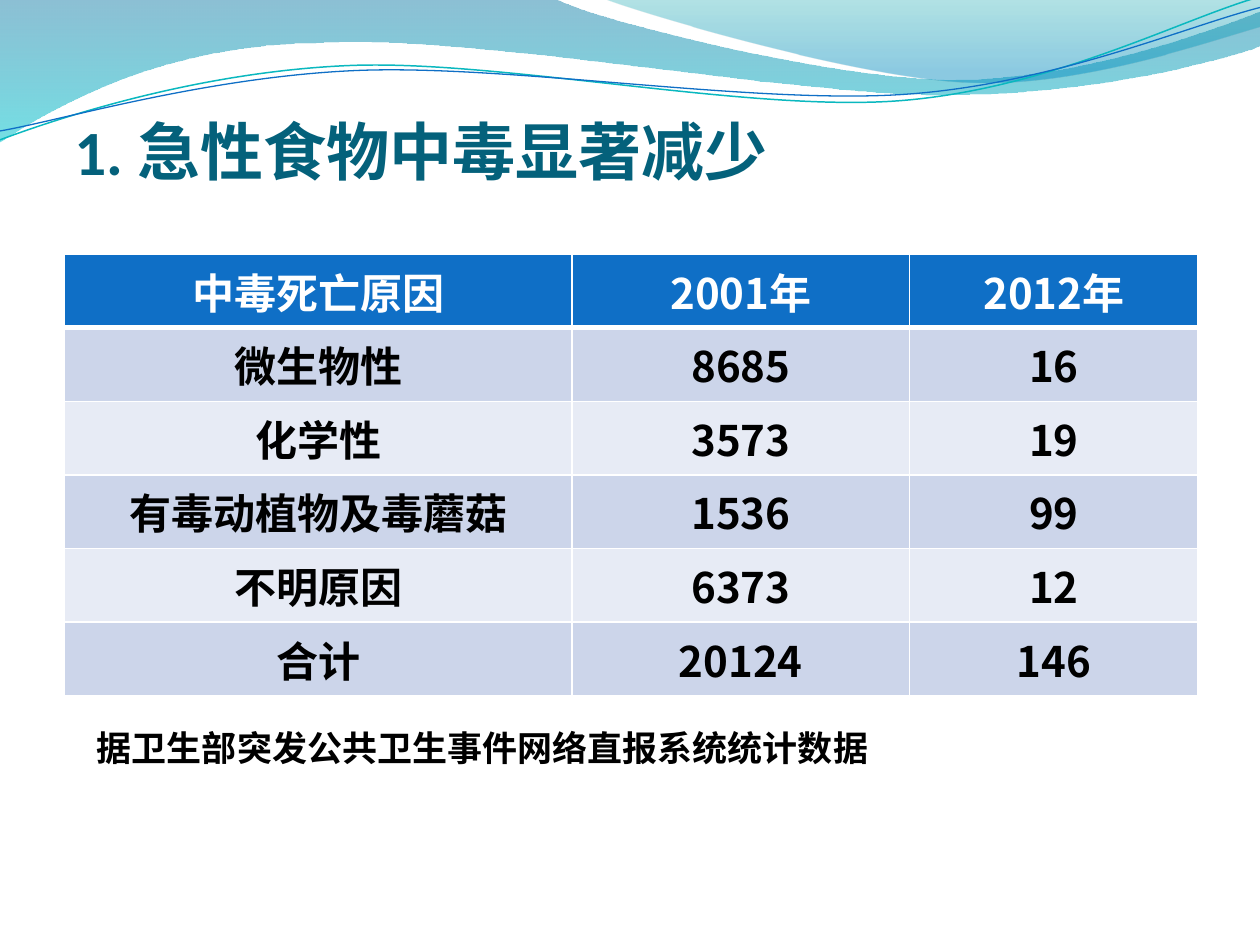
import math

from lxml import etree
from pptx import Presentation
from pptx import util as u
from pptx.dml.color import RGBColor
from pptx.enum import text
from pptx.oxml.ns import qn

WIDTH, HEIGHT = 10, 7.5
SANS, LATIN, SERIF = "Noto Sans CJK SC", "Calibri", "TeX Gyre Pagella"
WHITE, BLACK, TEAL, BLUE = "FFFFFF", "000000", "04617B", "0F6FC6"
BANDS = ("CCD5EA", "E7EBF5")
TILT = 357.3

BROAD_WAVE = [
    (0, -0.01), (4.4, -0.01),
    (4.76, 0.17, 6.64, 0.63, 7.58, 0.63), (8.53, 0.63, 9.58, 0.26, 10, 0.09),
    (10.01, 0.36),
    (9.83, 0.44, 8.7, 0.76, 7.46, 0.75), (6.22, 0.75, 3.82, 0.28, 2.57, 0.34),
    (1.29, 0.35, 0.46, 0.83, -0.01, 1.13),
]
RIGHT_WAVE = [
    (4.79, -0.01),
    (5.09, 0.11, 6.82, 0.62, 7.69, 0.65), (8.56, 0.69, 9.61, 0.32, 10, 0.21),
    (10, 0),
]
TEAL_STRAND = [
    (0, 1.11),
    (0.48, 0.93, 1.58, 0.57, 2.77, 0.52), (3.95, 0.47, 5.93, 0.89, 7.13, 0.8),
    (8.33, 0.71, 9.38, 0.15, 9.98, -0.02),
]
BLUE_STRAND = [
    (0, 1.04),
    (0.47, 0.96, 1.64, 0.61, 2.83, 0.56), (4.03, 0.51, 5.97, 0.83, 7.17, 0.75),
    (8.36, 0.67, 9.41, 0.21, 10, 0.06),
]
ROWS = [
    ("中毒死亡原因", "2001年", "2012年"),
    ("微生物性", "8685", "16"),
    ("化学性", "3573", "19"),
    ("有毒动植物及毒蘑菇", "1536", "99"),
    ("不明原因", "6373", "12"),
    ("合计", "20124", "146"),
]


def color(value):
    """Turn a hex string into a colour."""
    return RGBColor.from_string(value)


def box(left, top, width, height):
    """Turn percentages of the slide's size into lengths."""
    return [u.Inches(share * side / 100) for share, side in
            zip((left, top, width, height), (WIDTH, HEIGHT) * 2)]


def turn(point, pivot, degrees):
    """Rotate a point clockwise about a pivot."""
    angle = math.radians(degrees)
    x, y = point[0] - pivot[0], point[1] - pivot[1]
    return (pivot[0] + x * math.cos(angle) - y * math.sin(angle),
            pivot[1] + x * math.sin(angle) + y * math.cos(angle))


def add_wave(shapes, wave, close, pivot=(0, 0), rotation=0):
    """Draw lines (2 numbers) and curves (6 numbers) as one freeform."""
    points = [turn(segment[i:i + 2], pivot, -rotation)
              for segment in wave for i in range(0, len(segment), 2)]
    start, *rest = [(u.Inches(x), u.Inches(y)) for x, y in points]
    builder = shapes.build_freeform(*start)
    builder.add_line_segments(rest, close=close)
    shape = builder.convert_to_shape()
    shape.rotation = rotation
    shape.shadow.inherit = False
    lines = iter(list(shape._element.iter(qn("a:lnTo"))))
    for segment in wave[1:]:
        first = next(lines)
        if len(segment) == 6:
            first.tag = qn("a:cubicBezTo")
            for _ in range(2):
                follower = next(lines)
                first.append(follower[0])
                follower.getparent().remove(follower)
    return shape


def add_gradient_wave(shapes, wave, stops):
    """Draw a closed wave with a translucent fill from top to bottom."""
    shape = add_wave(shapes, wave, True)
    shape.line.fill.background()
    shape.fill.gradient()
    shape.fill.gradient_angle = 270
    for stop, (position, value, _) in zip(shape.fill.gradient_stops, stops):
        stop.position = position
        stop.color.rgb = color(value)
    for element, (_, _, opacity) in zip(shape._element.spPr.iter(qn("a:srgbClr")), stops):
        etree.SubElement(element, qn("a:alpha"), val=str(opacity * 1000))


def add_strand(shapes, wave, pivot, value, width):
    """Draw an open, tilted wave as a thin line."""
    shape = add_wave(shapes, wave, False, pivot, TILT)
    shape.fill.background()
    shape.line.color.rgb = color(value)
    shape.line.width = u.Pt(width)


def add_run(paragraph, words, size, value, latin):
    """Add one bold run with its Latin and East Asian fonts."""
    run = paragraph.add_run()
    run.text = words
    run.font.size = u.Pt(size)
    run.font.bold = True
    run.font.name = latin
    run.font.color.rgb = color(value)
    east_asian = etree.Element(qn("a:ea"), typeface=SANS)
    run.font._element.find(qn("a:latin")).addnext(east_asian)


def set_title(slide, words):
    """Place and fill the title placeholder."""
    title = slide.shapes.title
    title.left, title.top, title.width, title.height = box(5.9, 9, 59.2, 10.93)
    frame = title.text_frame
    frame.auto_size = text.MSO_AUTO_SIZE.NONE
    frame.vertical_anchor = text.MSO_ANCHOR.BOTTOM
    frame.margin_left = frame.margin_right = frame.margin_bottom = 0
    frame.paragraphs[0].alignment = text.PP_ALIGN.LEFT
    add_run(frame.paragraphs[0], words, 36, TEAL, LATIN)


def add_borders(cell, bottom):
    """Give a cell white borders."""
    properties = cell._tc.get_or_add_tcPr()
    for side, width in (("L", 1), ("R", 1), ("T", 1), ("B", bottom)):
        line = etree.SubElement(properties, qn(f"a:ln{side}"), w=str(u.Pt(width)))
        fill = etree.SubElement(line, qn("a:solidFill"))
        etree.SubElement(fill, qn("a:srgbClr"), val=WHITE)


def add_cause_table(slide, rows, widths):
    """Add the table of causes with a header and banded rows."""
    frame = slide.shapes.add_table(len(rows), len(widths), *box(5.1, 26.9, 90, 45.6))
    table = frame.table
    for column, width in zip(table.columns, widths):
        column.width = u.Inches(width)
    for index, row in enumerate(rows):
        header = index == 0
        for cell, words in zip(table.rows[index].cells, row):
            add_borders(cell, 3 if header else 1)
            cell.fill.solid()
            cell.fill.fore_color.rgb = color(BLUE if header else BANDS[(index - 1) % 2])
            paragraph = cell.text_frame.paragraphs[0]
            paragraph.alignment = text.PP_ALIGN.CENTER
            add_run(paragraph, words, 24, WHITE if header else BLACK, SANS)


def add_source_note(slide, words):
    """Add the note on the data's source below the table."""
    frame = slide.shapes.add_textbox(*box(6.7, 76.2, 78.8, 5.87)).text_frame
    frame.word_wrap = True
    frame.auto_size = text.MSO_AUTO_SIZE.SHAPE_TO_FIT_TEXT
    add_run(frame.paragraphs[0], words, 20, BLACK, SERIF)


def main():
    """Build and save the slide."""
    presentation = Presentation()
    presentation.slide_width, presentation.slide_height = u.Inches(WIDTH), u.Inches(HEIGHT)
    slide = presentation.slides.add_slide(presentation.slide_layouts.get_by_name("Title Only"))
    add_gradient_wave(slide.shapes, BROAD_WAVE, [(0, "0074A1", 45), (1, "00C6CF", 55)])
    add_gradient_wave(slide.shapes, RIGHT_WAVE, [(0, "00A1A9", 30), (0.8, "008BBF", 45)])
    strands = slide.shapes.add_group_shape().shapes
    add_strand(strands, TEAL_STRAND, (4.99, 0.58), "0AB8BF", 0.85)
    add_strand(strands, BLUE_STRAND, (5, 0.59), BLUE, 0.75)
    set_title(slide, "1. 急性食物中毒显著减少")
    add_cause_table(slide, ROWS, (4.03, 2.68, 2.29))
    add_source_note(slide, "据卫生部突发公共卫生事件网络直报系统统计数据")
    presentation.save("out.pptx")


if __name__ == "__main__":
    main()
